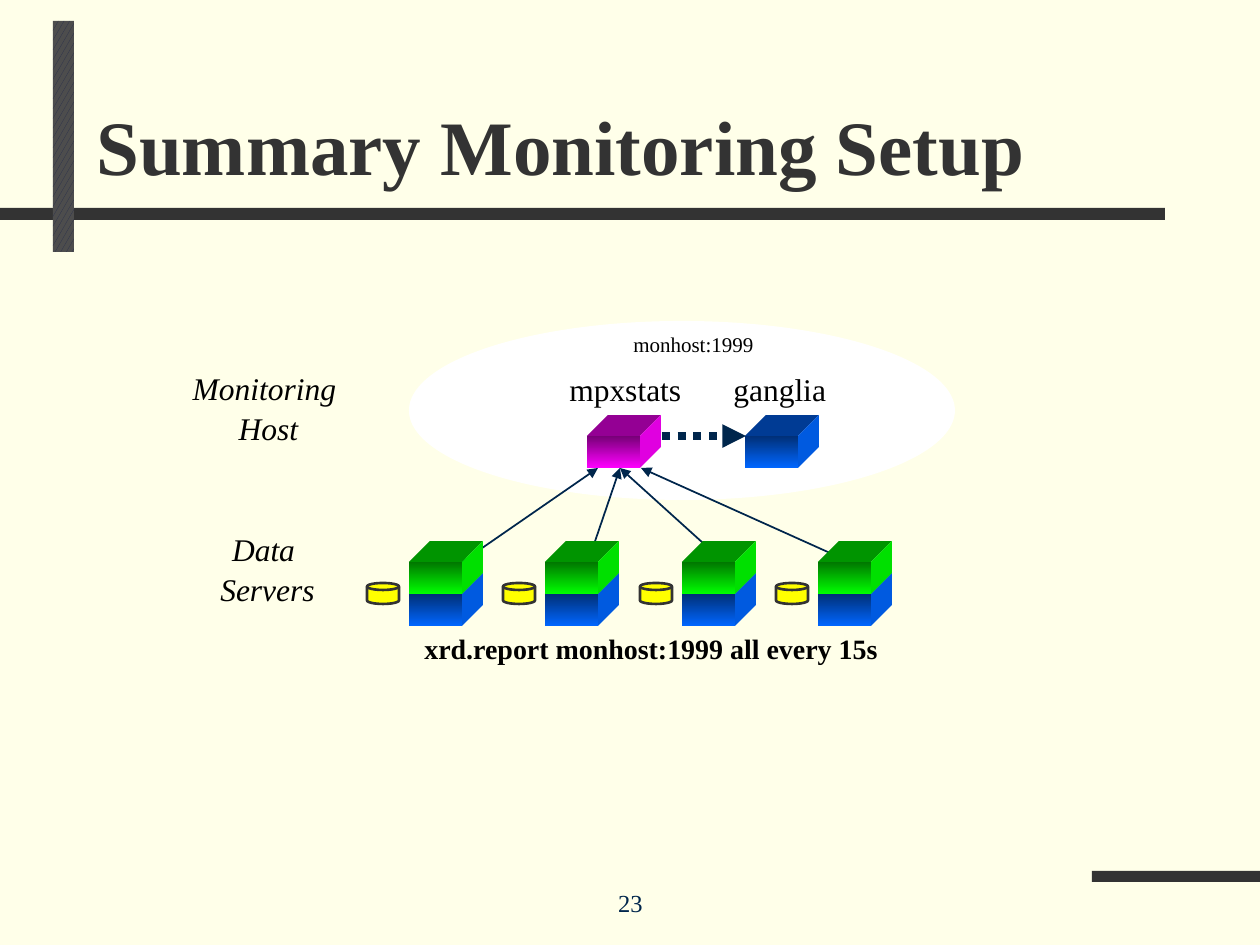
"""Build the summary monitoring setup slide."""
from lxml import etree
from pptx import Presentation
from pptx import util as u
from pptx.dml.color import RGBColor
from pptx.enum import dml, shapes, text
from pptx.oxml.ns import qn

PX = 9144000 // 1260
FONT = "Times New Roman"
DARK, NAVY, BLACK = "333333", "00264C", "000000"
LEFT, CENTER = text.PP_ALIGN.LEFT, text.PP_ALIGN.CENTER
TOP, BOTTOM = text.MSO_ANCHOR.TOP, text.MSO_ANCHOR.BOTTOM

BARS = [(0, 208, 1165, 12), (1092, 871, 168, 11)]
ACCENT = (53, 21, 21, 231)
HOST_AREA = (409, 321, 546, 179)

# front top, front bottom, upper face, right face
MAGENTA = ("760076", "FF00FF", "940094", "E000E0")
BLUE = ("002F76", "0066FF", "003B94", "005AE0")
GREEN = ("007600", "00FF00", "009400", "00E000")
FRONT_WIDTH, FRONT_HEIGHT, DEPTH = 53, 32, 21
HOST_TOP, SERVER_TOP = 436, 562
MPXSTATS_LEFT, GANGLIA_LEFT = 587, 745
SERVER_LEFTS = [409 + 273 * index // 2 for index in range(4)]
DISK_OFFSET, DISK_TOP, DISK_SIZE = -42, 583, (32, 21)

REPORTS = [((724, 562), (620, 468)), ((588, 562), (620, 468)),
           ((850, 562), (641, 468)), ((462, 562), (598, 468))]
FEED = ((662, 436), (746, 436))

# lines, box, size, colour, alignment, anchor, style, wraps
LABELS = [
    (["Summary Monitoring Setup"], (84, 39, 1124, 158), 44, DARK, LEFT, BOTTOM, "bold", True),
    (["23"], (431, 892, 399, 32), 14, NAVY, CENTER, BOTTOM, None, True),
    (["Data ", "Servers"], (207, 524, 121, 127), 18, BLACK, CENTER, TOP, "italic", False),
    (["Monitoring ", "Host"], (179, 363, 179, 89), 18, BLACK, CENTER, TOP, "italic", False),
    (["mpxstats"], (557, 364, 139, 50), 18, BLACK, LEFT, TOP, None, False),
    (["xrd.report monhost:1999 all every 15s"], (412, 625, 485, 47), 16, BLACK, LEFT, TOP, "bold", False),
    (["monhost:1999"], (620, 325, 147, 38), 12, BLACK, CENTER, TOP, None, False),
    (["ganglia"], (721, 364, 120, 50), 18, BLACK, LEFT, TOP, None, False),
]


def color(value):
    return RGBColor.from_string(value)


def emu(values):
    return [value * PX for value in values]


def paint(shape, fill):
    shape.shadow.inherit = False
    shape.fill.solid()
    shape.fill.fore_color.rgb = color(fill)
    shape.line.fill.background()
    return shape


def add_preset(slide, kind, box, fill):
    return paint(slide.shapes.add_shape(kind, *emu(box)), fill)


def add_face(slide, points, fill):
    builder = slide.shapes.build_freeform(*points[0], scale=PX)
    builder.add_line_segments(points[1:], close=True)
    paint(builder.convert_to_shape(), fill)


def add_cube(slide, left, top, colors):
    start, end, upper, side = colors
    right, bottom = left + FRONT_WIDTH, top + FRONT_HEIGHT
    back_left, back_right, back_top = left + DEPTH, right + DEPTH, top - DEPTH
    add_face(slide, [(left, top), (back_left, back_top), (back_right, back_top), (right, top)], upper)
    add_face(slide, [(right, top), (back_right, back_top),
                     (back_right, bottom - DEPTH), (right, bottom)], side)
    front = add_preset(slide, shapes.MSO_SHAPE.RECTANGLE,
                       (left, top, FRONT_WIDTH, FRONT_HEIGHT), end)
    front.fill.gradient()
    front.fill.gradient_angle = 270
    for stop, value in zip(front.fill.gradient_stops, (start, end)):
        stop.color.rgb = color(value)


def add_arrow(slide, ends, width, dash=None):
    start, end = ends
    arrow = slide.shapes.add_connector(shapes.MSO_CONNECTOR.STRAIGHT, *emu(start + end))
    arrow.line.color.rgb = color(NAVY)
    arrow.line.width = u.Pt(width)
    if dash:
        arrow.line.dash_style = dash
    properties = arrow._element.spPr
    etree.SubElement(properties.find(qn("a:ln")), qn("a:tailEnd"), type="triangle")
    etree.SubElement(properties, qn("a:effectLst"))


def add_label(slide, lines, box, size, fill, alignment, anchor, style, wraps):
    frame = slide.shapes.add_textbox(*emu(box)).text_frame
    frame.word_wrap = wraps
    frame.vertical_anchor = anchor
    for index, line in enumerate(lines):
        paragraph = frame.add_paragraph() if index else frame.paragraphs[0]
        paragraph.text = line
        paragraph.alignment = alignment
        if index:
            paragraph.space_before = u.Pt(1)
        font = paragraph.font
        font.name, font.size = FONT, u.Pt(size)
        font.bold, font.italic = style == "bold", style == "italic"
        font.color.rgb = color(fill)


def main():
    presentation = Presentation()
    presentation.slide_width, presentation.slide_height = emu((1260, 945))
    slide = presentation.slides.add_slide(presentation.slide_layouts[6])
    slide.background.fill.solid()
    slide.background.fill.fore_color.rgb = color("FFFFE9")

    for bar in BARS:
        add_preset(slide, shapes.MSO_SHAPE.RECTANGLE, bar, DARK)
    accent = add_preset(slide, shapes.MSO_SHAPE.RECTANGLE, ACCENT, DARK)
    accent.fill.patterned()
    accent.fill.pattern = dml.MSO_PATTERN.LARGE_CONFETTI
    accent.fill.fore_color.rgb = color("262D4C")
    accent.fill.back_color.rgb = color("4D4D4D")

    add_preset(slide, shapes.MSO_SHAPE.OVAL, HOST_AREA, "FFFFFF")
    for report in REPORTS:
        add_arrow(slide, report, 1)
    add_cube(slide, GANGLIA_LEFT, HOST_TOP, BLUE)
    add_cube(slide, MPXSTATS_LEFT, HOST_TOP, MAGENTA)
    add_arrow(slide, FEED, 4.5, dml.MSO_LINE.ROUND_DOT)

    for left in SERVER_LEFTS:
        add_cube(slide, left, SERVER_TOP + FRONT_HEIGHT, BLUE)
        add_cube(slide, left, SERVER_TOP, GREEN)
        disk = add_preset(slide, shapes.MSO_SHAPE.FLOWCHART_MAGNETIC_DISK,
                          (left + DISK_OFFSET, DISK_TOP, *DISK_SIZE), "FFFF00")
        disk.line.color.rgb = color(DARK)
        disk.line.width = u.Pt(1.5)

    for label in LABELS:
        add_label(slide, *label)
    presentation.save("out.pptx")


if __name__ == "__main__":
    main()
